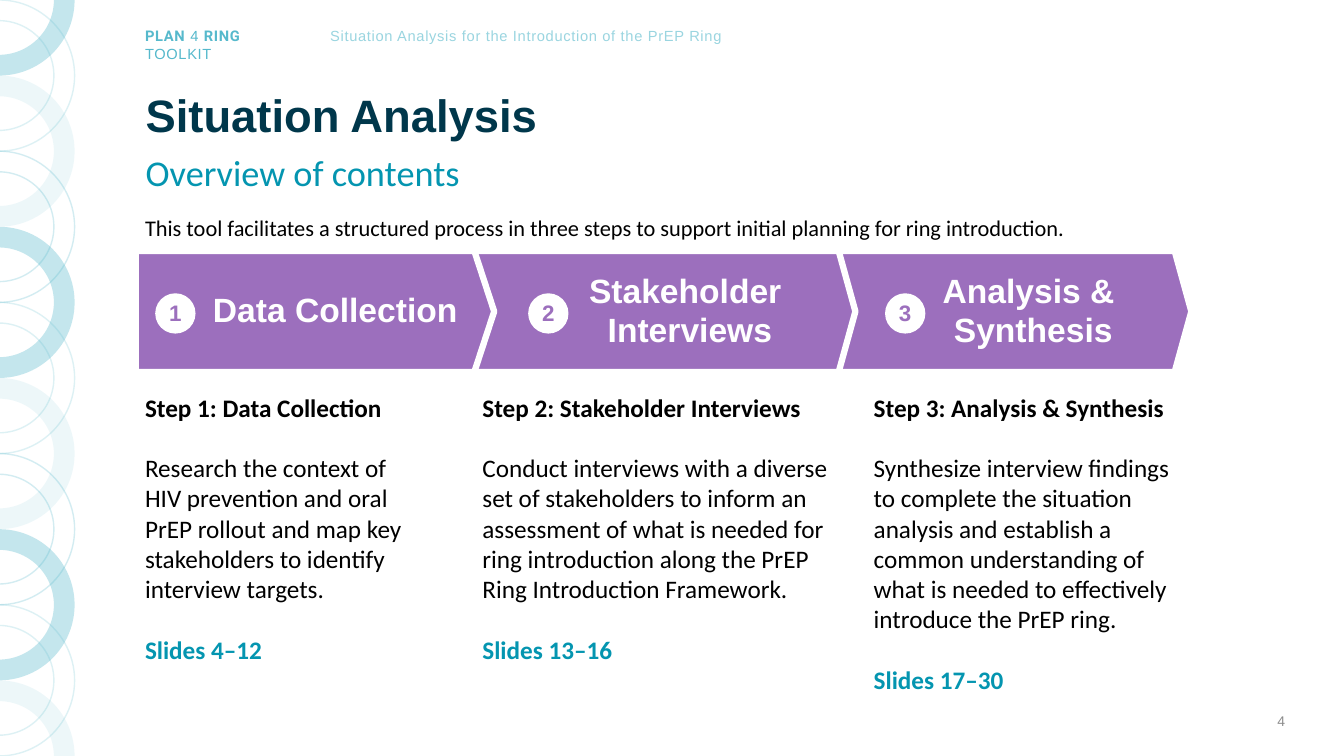
from dataclasses import dataclass
from itertools import cycle
from math import cos, radians, sin

from lxml import etree
from pptx import Presentation
from pptx.dml.color import RGBColor
from pptx.enum.shapes import MSO_SHAPE
from pptx.enum.text import MSO_ANCHOR, PP_ALIGN
from pptx.oxml.ns import qn
from pptx.util import Pt

LEFT, CENTER, RIGHT = PP_ALIGN.LEFT, PP_ALIGN.CENTER, PP_ALIGN.RIGHT
TOP, MIDDLE = MSO_ANCHOR.TOP, MSO_ANCHOR.MIDDLE
PENTAGON, OVAL = MSO_SHAPE.PENTAGON, MSO_SHAPE.OVAL


@dataclass(frozen=True)
class Theme:
    heading_font: str = "Arial"
    body_font: str = "Calibri"
    brand_font: str = "Roboto"
    navy: str = "00374B"
    teal: str = "0495B0"
    aqua: str = "56B9CC"
    pale_aqua: str = "9AD5E0"
    purple: str = "9C6FBD"
    black: str = "000000"
    white: str = "FFFFFF"
    gray: str = "8C8C8C"
    title_size: float = 32.4
    subtitle_size: float = 25.9
    banner_size: float = 24
    step_size: float = 18
    intro_size: float = 16
    header_size: float = 10.5
    number_size: float = 10


THEME = Theme()
PAGE_WIDTH, PAGE_HEIGHT = 960, 540
RING_STEP = 54
RING_OUTER, RING_INNER = 54, 39.2
RING_CENTER_X = -0.7
# Ring styles from the top down: (filled, opacity in percent)
RING_STYLES = ((True, 35), (False, 20), (True, 10), (False, 25))
BANNER_TOP, BANNER_HEIGHT = 179.3, 86.4
BADGE_TOP, BADGE_SIZE = 209.5, 28.8
STEPS_TOP = 276.5


@dataclass(frozen=True)
class Step:
    banner: str
    banner_left: float
    banner_width: float
    point: float
    inset: float
    badge_left: float
    text_left: float
    text_width: float
    heading: str
    body: str
    slides: str


STEPS = (
    Step("Data Collection", 97, 256, 0.164, 43, 110.9, 96.5, 212,
         "Step 1: Data Collection",
         "Research the context of HIV prevention and oral PrEP rollout and map key "
         "stakeholders to identify interview targets.",
         "Slides 4–12"),
    Step("Stakeholder \vInterviews", 330, 281, 0.138, 57.6, 377.3, 337.5, 281,
         "Step 2: Stakeholder Interviews",
         "Conduct interviews with a diverse set of stakeholders to inform an assessment "
         "of what is needed for ring introduction along the PrEP Ring Introduction Framework.",
         "Slides 13–16"),
    Step("Analysis & \vSynthesis", 595, 256, 0.138, 43.2, 632.2, 617, 234,
         "Step 3: Analysis & Synthesis",
         "Synthesize interview findings to complete the situation analysis and establish "
         "a common understanding of what is needed to effectively introduce the PrEP ring.",
         "Slides 17–30"),
)


def set_font(font, name, size, color, bold=False):
    font.name, font.size, font.bold = name, Pt(size), bold
    font.color.rgb = RGBColor.from_string(color)


def paint(fill_format, color):
    fill_format.solid()
    fill_format.fore_color.rgb = RGBColor.from_string(color)


def add_text_box(page, left, top, width, height, anchor=TOP):
    frame = page.shapes.add_textbox(Pt(left), Pt(top), Pt(width), Pt(height)).text_frame
    frame.word_wrap = True
    frame.vertical_anchor = anchor
    return frame


def add_line(page, area, text, name, size, color, bold=False, align=LEFT,
             anchor=TOP, spacing=1.0):
    """Add a text box that holds one paragraph."""
    para = add_text_box(page, *area, anchor).paragraphs[0]
    para.text, para.alignment, para.line_spacing = text, align, spacing
    set_font(para.font, name, size, color, bold)
    return para


def track(para):
    """Widen the letter spacing of a paragraph by half a point."""
    for span in para.runs:
        span.font._element.set("spc", "50")


def add_header(page):
    para = add_text_box(page, 96.5, 15.8, 132, 34).paragraphs[0]
    for text, bold in (("PLAN", True), (" 4 ", False), ("RING", True), ("TOOLKIT", False)):
        if text == "TOOLKIT":
            para.add_line_break()
        span = para.add_run()
        span.text = text
        name = THEME.brand_font if bold else THEME.heading_font
        set_font(span.font, name, THEME.header_size, THEME.aqua, bold)
    track(para)
    track(add_line(page, (226, 15.8, 300, 20),
                   "Situation Analysis for the Introduction of the PrEP Ring",
                   THEME.heading_font, THEME.header_size, THEME.pale_aqua, align=CENTER))


def ring_points(center_y, radius, angles):
    return [(Pt(RING_CENTER_X + radius * cos(radians(angle))),
             Pt(center_y + radius * sin(radians(angle)))) for angle in angles]


def bend(segment, radius, start, sweep):
    """Turn a straight freeform segment into a circular arc."""
    arc = etree.Element(qn("a:arcTo"), wR=str(Pt(radius)), hR=str(Pt(radius)),
                        stAng=str(start * 60000), swAng=str(sweep * 60000))
    segment.getparent().replace(segment, arc)


def add_half_ring(page, center_y, filled, opacity):
    """Draw the right half of a ring, cut off at the page's top and bottom."""
    angles = [angle for angle in (-90, 0, 90)
              if 0 <= center_y + RING_OUTER * sin(radians(angle)) <= PAGE_HEIGHT]
    points = (ring_points(center_y, RING_OUTER, angles)
              + ring_points(center_y, RING_INNER, angles[::-1]))
    builder = page.shapes.build_freeform(*points[0])
    builder.add_line_segments(points[1:], close=False)
    builder.add_line_segments([], close=True)
    ring = builder.convert_to_shape()
    segments = list(ring.element.iter(qn("a:lnTo")))
    quarters = len(angles) - 1
    for index in range(quarters):
        bend(segments[index], RING_OUTER, angles[index] % 360, 90)
        bend(segments[quarters + 1 + index], RING_INNER, angles[-1 - index] % 360, -90)
    ring.shadow.inherit = False
    painted, empty = (ring.fill, ring.line.fill) if filled else (ring.line.fill, ring.fill)
    paint(painted, THEME.aqua)
    empty.background()
    if not filled:
        ring.line.width = Pt(1)
    for color in ring.element.spPr.iter(qn("a:srgbClr")):
        etree.SubElement(color, qn("a:alpha"), val=str(opacity * 1000))


def add_ring_border(page):
    centers = range(0, PAGE_HEIGHT + 1, RING_STEP)
    for center_y, (filled, opacity) in zip(centers, cycle(RING_STYLES)):
        add_half_ring(page, center_y, filled, opacity)


def add_label_shape(page, kind, area, fill, text, size, color, left_inset=0, right_inset=0):
    shape = page.shapes.add_shape(kind, *map(Pt, area))
    shape.shadow.inherit = False
    paint(shape.fill, fill)
    shape.line.fill.background()
    frame = shape.text_frame
    frame.word_wrap, frame.vertical_anchor = True, MIDDLE
    frame.margin_left, frame.margin_right = Pt(left_inset), Pt(right_inset)
    frame.margin_top = frame.margin_bottom = 0
    para = frame.paragraphs[0]
    para.text, para.alignment, para.line_spacing = text, CENTER, 0.95
    set_font(para.font, THEME.heading_font, size, color, True)
    return shape


def add_banner(page, step):
    area = (step.banner_left, BANNER_TOP, step.banner_width, BANNER_HEIGHT)
    arrow = add_label_shape(page, PENTAGON, area, THEME.purple, step.banner,
                            THEME.banner_size, THEME.white, step.inset, 7.2)
    arrow.adjustments[0] = step.point
    paint(arrow.line.fill, THEME.white)
    arrow.line.width = Pt(4.5)


def add_badge(page, step, number):
    add_label_shape(page, OVAL, (step.badge_left, BADGE_TOP, BADGE_SIZE, BADGE_SIZE),
                    THEME.white, str(number), THEME.intro_size, THEME.purple)


def add_step_text(page, step):
    frame = add_text_box(page, step.text_left, STEPS_TOP, step.text_width, 225)
    lines = ((step.heading, THEME.black, True), (step.body, THEME.black, False),
             (step.slides, THEME.teal, True))
    for index, (text, color, bold) in enumerate(lines):
        para = frame.add_paragraph() if index else frame.paragraphs[0]
        para.text = text
        if index:
            para.space_before = Pt(21.6)
        set_font(para.font, THEME.body_font, THEME.step_size, color, bold)


def main():
    deck = Presentation()
    deck.slide_width, deck.slide_height = Pt(PAGE_WIDTH), Pt(PAGE_HEIGHT)
    page = deck.slides.add_slide(deck.slide_layouts[6])
    add_header(page)
    add_ring_border(page)
    add_line(page, (97, 64, 797, 40), "Situation Analysis", THEME.heading_font,
             THEME.title_size, THEME.navy, bold=True, anchor=MIDDLE, spacing=0.9)
    add_line(page, (97, 107.3, 799, 37.5), "Overview of contents", THEME.body_font,
             THEME.subtitle_size, THEME.teal, spacing=0.9)
    add_line(page, (96.5, 147.6, 799, 27.4),
             "This tool facilitates a structured process in three steps to support "
             "initial planning for ring introduction.",
             THEME.body_font, THEME.intro_size, THEME.black, spacing=1.1)
    for step in STEPS:
        add_step_text(page, step)
    for step in reversed(STEPS):
        add_banner(page, step)
    for number, step in enumerate(STEPS, 1):
        add_badge(page, step, number)
    add_line(page, (709, 500.4, 216, 28.8), "4", THEME.heading_font,
             THEME.number_size, THEME.gray, align=RIGHT, anchor=MIDDLE)
    deck.save("out.pptx")


if __name__ == "__main__":
    main()
